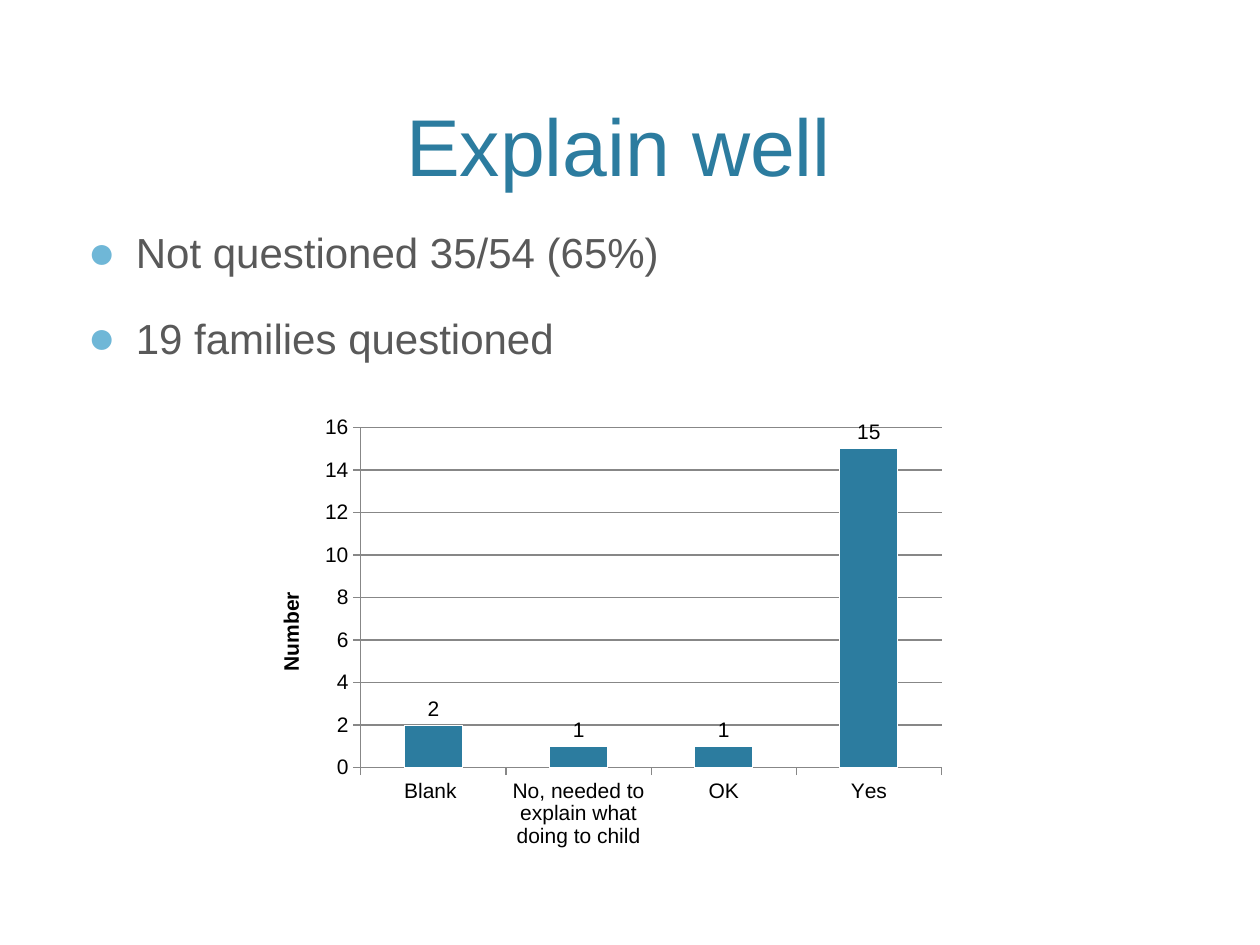
from dataclasses import dataclass

import lxml.etree
import pptx
import pptx.chart.data
import pptx.dml.color
import pptx.enum.chart
import pptx.enum.text
import pptx.oxml
import pptx.oxml.ns
import pptx.util

Cm, Pt = pptx.util.Cm, pptx.util.Pt
FONT = "Arial"
COLOURS = {
    "accent": "2C7C9F",
    "bullet": "6FB7D7",
    "body": "595959",
    "chart_text": "000000",
    "axis": "878787",
    "bar_edge": "FFFFFF",
}


@dataclass
class TextBlock:
    """Text box with one style for all its paragraphs."""

    lines: list[str]
    top: float
    height: float
    size: int
    colour: str
    anchor: pptx.enum.text.MSO_ANCHOR
    alignment: pptx.enum.text.PP_ALIGN
    bulleted: bool = False


BLOCKS = [
    TextBlock(["Explain well "], 0.3, 3.71, 46, "accent",
              pptx.enum.text.MSO_ANCHOR.BOTTOM, pptx.enum.text.PP_ALIGN.CENTER),
    TextBlock(["Not questioned 35/54 (65%)", "19 families questioned"], 4.45, 12.07, 24, "body",
              pptx.enum.text.MSO_ANCHOR.TOP, pptx.enum.text.PP_ALIGN.LEFT, True),
]
ANSWERS = {"Blank ": 2, "No, needed to explain what doing to child": 1, "OK": 1, "Yes": 15}
PLOT_LAYOUT = {"x": 0.115, "y": 0.069, "w": 0.734, "h": 0.711}


def rgb(name: str) -> pptx.dml.color.RGBColor:
    """Return the named colour."""
    return pptx.dml.color.RGBColor.from_string(COLOURS[name])


def style_font(font, size: int, colour: str, bold: bool = False) -> None:
    """Set typeface, size, weight and colour."""
    font.name, font.size, font.bold = FONT, Pt(size), bold
    font.color.rgb = rgb(colour)


def add_bullet(paragraph) -> None:
    """Give the paragraph a round bullet with a hanging indent."""
    properties = paragraph._p.get_or_add_pPr()
    properties.set("marL", str(Cm(0.97)))
    properties.set("indent", str(Cm(-0.97)))
    qn = pptx.oxml.ns.qn
    colour = lxml.etree.SubElement(properties, qn("a:buClr"))
    lxml.etree.SubElement(colour, qn("a:srgbClr"), val=COLOURS["bullet"])
    lxml.etree.SubElement(properties, qn("a:buSzPct"), val="110000")
    lxml.etree.SubElement(properties, qn("a:buFont"), typeface=FONT)
    lxml.etree.SubElement(properties, qn("a:buChar"), char="●")
    paragraph.space_before = Pt(20)


def add_text(slide, block: TextBlock) -> None:
    """Draw one text block."""
    shape = slide.shapes.add_textbox(Cm(1.52), Cm(block.top), Cm(22.35), Cm(block.height))
    frame = shape.text_frame
    frame.word_wrap = True
    frame.vertical_anchor = block.anchor
    frame.text = "\n".join(block.lines)
    for paragraph in frame.paragraphs:
        if block.bulleted:
            add_bullet(paragraph)
        paragraph.alignment = block.alignment
        style_font(paragraph.font, block.size, block.colour)


def set_plot_layout(chart) -> None:
    """Fix the inner plot area as fractions of the chart."""
    qn = pptx.oxml.ns.qn
    plot_area = chart._chartSpace.chart.plotArea
    for old in plot_area.findall(qn("c:layout")):
        plot_area.remove(old)
    layout = lxml.etree.Element(qn("c:layout"))
    manual = lxml.etree.SubElement(layout, qn("c:manualLayout"))
    lxml.etree.SubElement(manual, qn("c:layoutTarget"), val="inner")
    for key in "xy":
        lxml.etree.SubElement(manual, qn(f"c:{key}Mode"), val="edge")
    for key, fraction in PLOT_LAYOUT.items():
        lxml.etree.SubElement(manual, qn(f"c:{key}"), val=str(fraction))
    plot_area.insert(0, layout)


def add_answer_chart(slide) -> None:
    """Draw the column chart of answers."""
    data = pptx.chart.data.CategoryChartData()
    data.categories = list(ANSWERS)
    data.add_series("Series 1", list(ANSWERS.values()))
    chart = slide.shapes.add_chart(
        pptx.enum.chart.XL_CHART_TYPE.COLUMN_CLUSTERED,
        Cm(5.44), Cm(7.95), Cm(15.95), Cm(9.65), data,
    ).chart
    chart.has_title = chart.has_legend = False
    style_font(chart.font, 12, "chart_text")
    set_plot_layout(chart)

    plot = chart.plots[0]
    plot.gap_width = 150
    plot.vary_by_categories = False
    plot.has_data_labels = True
    plot.data_labels.show_value = True
    plot.data_labels.position = pptx.enum.chart.XL_LABEL_POSITION.OUTSIDE_END
    style_font(plot.data_labels.font, 12, "chart_text")
    bars = plot.series[0].format
    bars.fill.solid()
    bars.fill.fore_color.rgb = rgb("accent")
    bars.line.color.rgb = rgb("bar_edge")

    value_axis = chart.value_axis
    value_axis.minimum_scale, value_axis.maximum_scale, value_axis.major_unit = 0, 16, 2
    value_axis.has_major_gridlines = True
    title = value_axis.axis_title.text_frame
    title.text = "Number"
    style_font(title.paragraphs[0].font, 12, "chart_text", True)
    for axis in (chart.category_axis, value_axis):
        axis.major_tick_mark = pptx.enum.chart.XL_TICK_MARK.OUTSIDE
        style_font(axis.tick_labels.font, 12, "chart_text")
    for item in (chart.category_axis, value_axis, value_axis.major_gridlines):
        item.format.line.color.rgb = rgb("axis")
        item.format.line.width = Pt(0.75)


def main() -> None:
    """Build and save the slide."""
    presentation = pptx.Presentation()
    presentation.slide_width, presentation.slide_height = Cm(25.4), Cm(19.05)
    slide = presentation.slides.add_slide(presentation.slide_layouts[6])
    for block in BLOCKS:
        add_text(slide, block)
    add_answer_chart(slide)
    presentation.save("out.pptx")


if __name__ == "__main__":
    main()
